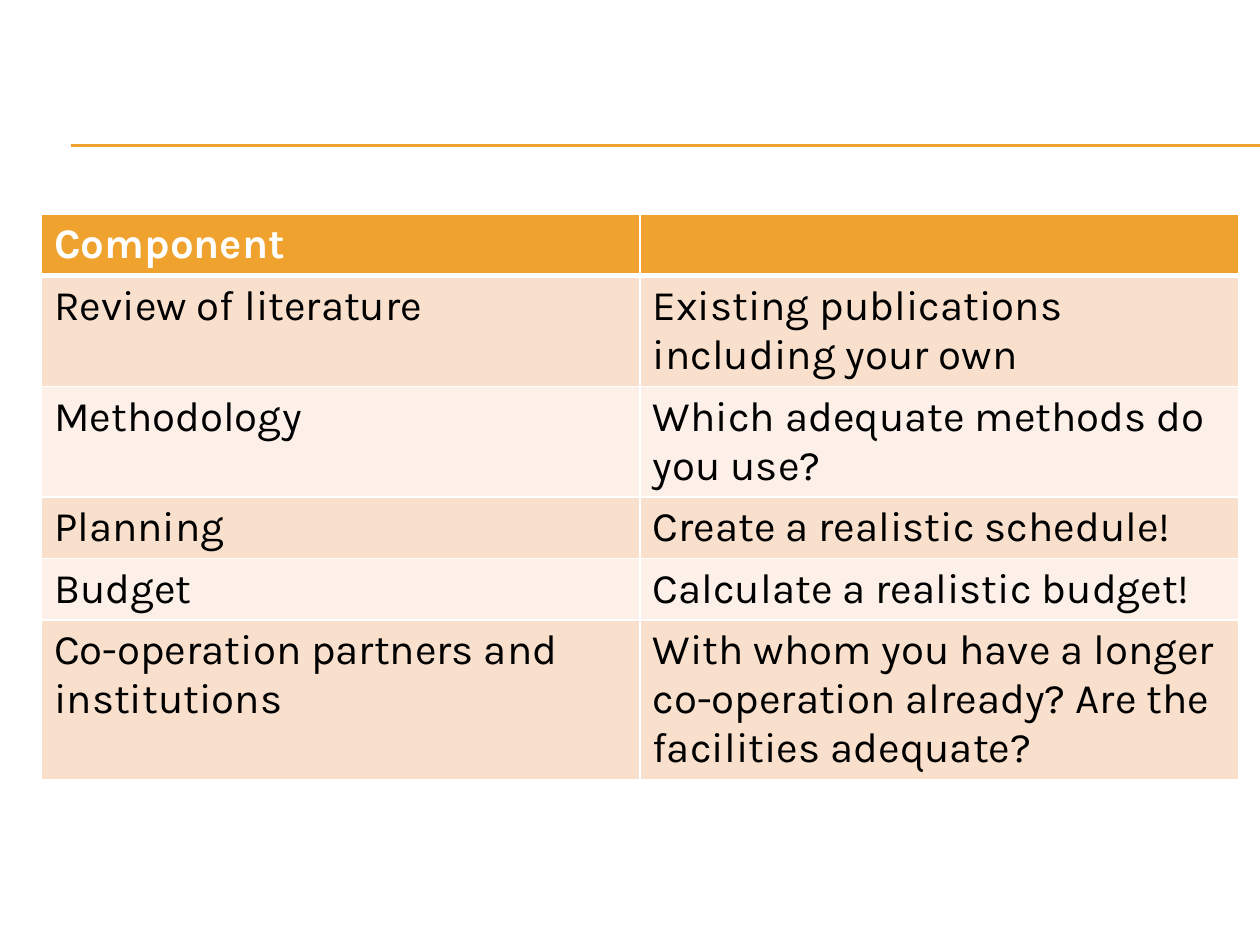
"""Build a slide with a table of proposal components under a double rule."""
from lxml import etree
from pptx import Presentation
from pptx.dml.color import RGBColor
from pptx.enum.shapes import MSO_CONNECTOR
from pptx.oxml.ns import qn
from pptx.util import Inches, Pt

STRAIGHT = MSO_CONNECTOR.STRAIGHT
SLIDE_WIDTH, SLIDE_HEIGHT = 10, 7.5
ORANGE, WHITE, BLACK = "F0A22E", "FFFFFF", "000000"
BANDS = ("F9E0CD", "FCF0E8")
ROWS = [
    ("Component", ""),
    ("Review of literature", "Existing publications including your own"),
    ("Methodology", "Which adequate methods do you use?"),
    ("Planning", "Create a realistic schedule!"),
    ("Budget", "Calculate a realistic budget!"),
    ("Co-operation partners and institutions",
     "With whom you have a longer co-operation already? Are the facilities adequate?"),
]
RULE_LEFT, RULE_TOPS = 0.56, (1.15, 1.16)
TABLE_LEFT, TABLE_TOP, TABLE_WIDTH, ROW_HEIGHT = 0.33, 1.7, 9.5, 0.41
FONT = {"name": "Karla", "size": Pt(24)}


def color(value):
    return RGBColor.from_string(value)


def add_rule(slide, top):
    rule = slide.shapes.add_connector(
        STRAIGHT, Inches(RULE_LEFT), Inches(top), Inches(SLIDE_WIDTH), Inches(top))
    rule.line.color.rgb = color(ORANGE)
    rule.line.width = Pt(0.75)
    etree.SubElement(rule._element.spPr, qn("a:effectLst"))


def add_borders(cell, widths):
    properties = cell._tc.get_or_add_tcPr()
    for side, width in widths.items():
        line = etree.SubElement(properties, qn(f"a:ln{side}"), w=str(Pt(width)))
        fill = etree.SubElement(line, qn("a:solidFill"))
        etree.SubElement(fill, qn("a:srgbClr"), val=WHITE)


def format_cell(cell, text, row):
    header = row == 0
    add_borders(cell, {"L": 1, "R": 1, "T": 3 if row == 1 else 1, "B": 3 if header else 1})
    cell.fill.solid()
    cell.fill.fore_color.rgb = color(ORANGE if header else BANDS[(row - 1) % 2])
    if not text:
        return
    run = cell.text_frame.paragraphs[0].add_run()
    run.text = text
    for name, value in {**FONT, "bold": header}.items():
        setattr(run.font, name, value)
    run.font.color.rgb = color(WHITE if header else BLACK)


def add_component_table(slide):
    table = slide.shapes.add_table(
        len(ROWS), len(ROWS[0]), Inches(TABLE_LEFT), Inches(TABLE_TOP),
        Inches(TABLE_WIDTH), Inches(ROW_HEIGHT * len(ROWS))).table
    for row, texts in enumerate(ROWS):
        for column, text in enumerate(texts):
            format_cell(table.cell(row, column), text, row)


def main():
    presentation = Presentation()
    presentation.slide_width = Inches(SLIDE_WIDTH)
    presentation.slide_height = Inches(SLIDE_HEIGHT)
    slide = presentation.slides.add_slide(presentation.slide_layouts[6])
    for top in RULE_TOPS:
        add_rule(slide, top)
    add_component_table(slide)
    presentation.save("out.pptx")


if __name__ == "__main__":
    main()
